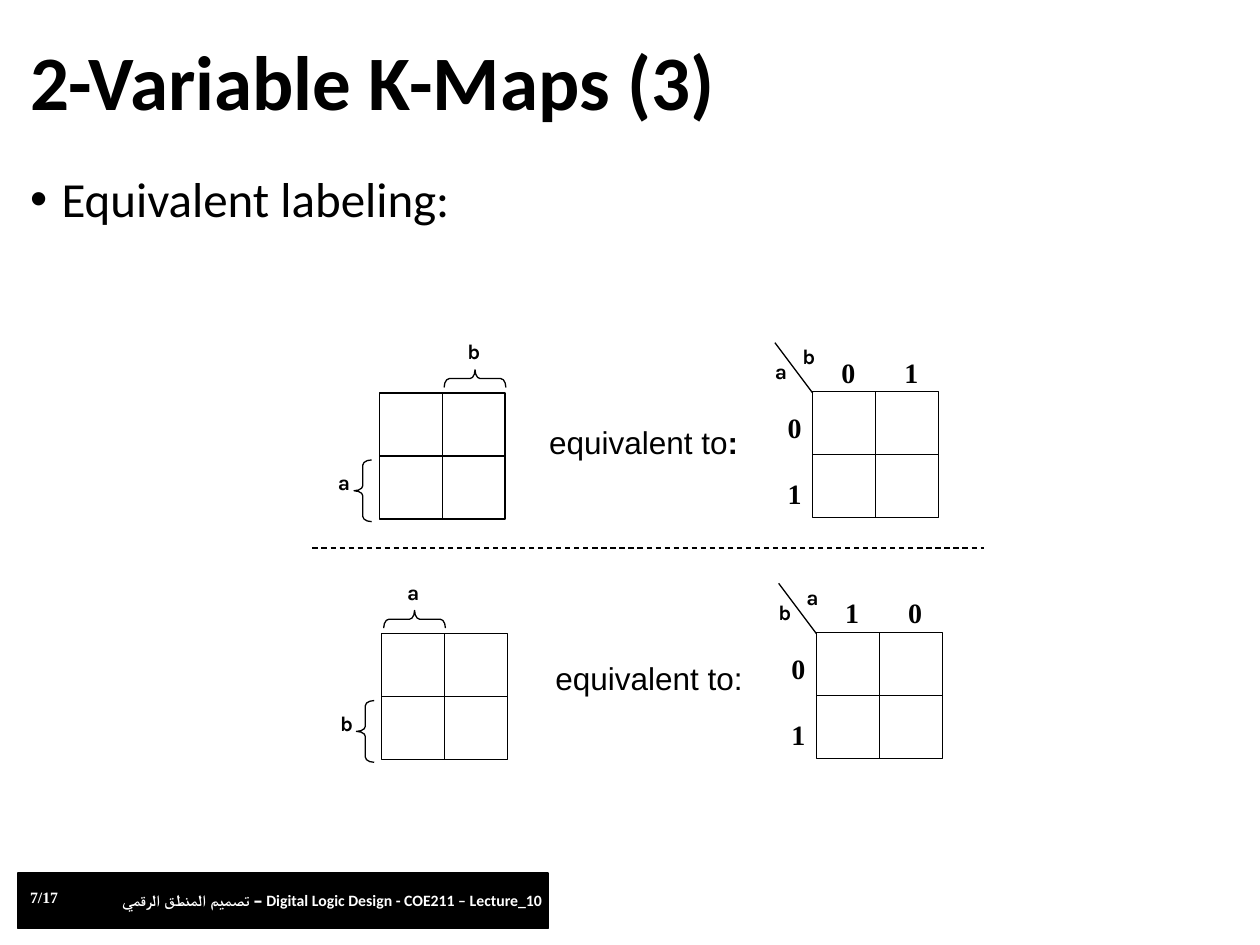
from lxml import etree
from pptx import Presentation
from pptx.dml.color import RGBColor
from pptx.enum.dml import MSO_LINE
from pptx.enum.shapes import MSO_CONNECTOR, MSO_SHAPE
from pptx.enum.text import MSO_ANCHOR, PP_ALIGN
from pptx.oxml.ns import qn
from pptx.util import Pt

PX = 9144  # EMU per px, 100 px to the inch
BLACK = RGBColor(0x00, 0x00, 0x00)
WHITE = RGBColor(0xFF, 0xFF, 0xFF)
RECTANGLE, BRACE = MSO_SHAPE.RECTANGLE, MSO_SHAPE.LEFT_BRACE
STRAIGHT, DASH = MSO_CONNECTOR.STRAIGHT, MSO_LINE.DASH
LEFT, CENTER, RIGHT = PP_ALIGN.LEFT, PP_ALIGN.CENTER, PP_ALIGN.RIGHT
TOP, MIDDLE = MSO_ANCHOR.TOP, MSO_ANCHOR.MIDDLE

TITLE = {"name": "Calibri", "size": Pt(44), "bold": True}
BODY = {"name": "Calibri", "size": Pt(28)}
VARIABLE = {"name": "Karla", "size": Pt(12), "bold": True}
DIGIT = {"name": "Times New Roman", "size": Pt(16), "bold": True}
PHRASE = {"name": "Arial", "size": Pt(18)}
FOOTER = {"name": "Calibri", "size": Pt(9), "bold": True}
PAGE = {"name": "Times New Roman", "size": Pt(9), "bold": True}

CELL = 50
GRID = 2 * CELL


def emu(*lengths):
    return [length * PX for length in lengths]


def add_run(paragraph, text, font_format, color=BLACK):
    run = paragraph.add_run()
    run.text = text
    for attribute, value in font_format.items():
        setattr(run.font, attribute, value)
    run.font.color.rgb = color


def add_text(slide, box, lines, font_format, color=BLACK, align=LEFT,
             anchor=TOP, wrap=True, **spacing):
    """Adds one paragraph per line and returns the paragraphs."""
    frame = slide.shapes.add_textbox(*emu(*box)).text_frame
    frame.word_wrap = wrap
    frame.vertical_anchor = anchor
    for index, line in enumerate(lines):
        paragraph = frame.add_paragraph() if index else frame.paragraphs[0]
        paragraph.alignment = align
        for attribute, value in spacing.items():
            setattr(paragraph, attribute, value)
        add_run(paragraph, line, font_format, color)
    return frame.paragraphs


def add_outline(slide, kind, box, width=0.75):
    shape = slide.shapes.add_shape(kind, *emu(*box))
    shape.shadow.inherit = False
    shape.fill.background()
    shape.line.color.rgb = BLACK
    shape.line.width = Pt(width)
    return shape


def add_line(slide, start, end):
    line = slide.shapes.add_connector(STRAIGHT, *emu(*start, *end))
    line.line.color.rgb = BLACK
    line.line.width = Pt(0.75)
    etree.SubElement(line._element.spPr, qn("a:effectLst"))
    return line


def add_brace(slide, left, top, rotation=0):
    brace = add_outline(slide, BRACE, (left, top, 14, 49))
    brace.adjustments[0] = 0.29
    brace.rotation = rotation


def add_grid(slide, left, top):
    add_outline(slide, RECTANGLE, (left, top, GRID, GRID))
    add_line(slide, (left, top + CELL), (left + GRID, top + CELL))
    add_line(slide, (left + CELL, top), (left + CELL, top + GRID))


def add_brace_map(slide, left, top, row, column, column_index):
    """K-map whose variables are marked with braces."""
    shift = column_index * CELL
    add_grid(slide, left + 50, top + 48)
    add_text(slide, (left, top + 104, 44, 40), [row], VARIABLE, align=CENTER)
    add_brace(slide, left + 30, top + 101)
    add_brace(slide, left + 69 + shift, top + 12, rotation=90)
    add_text(slide, (left + 53 + shift, top, 44, 32), [column], VARIABLE,
             align=CENTER)


def add_value_map(slide, left, top, row, column, column_values):
    """K-map whose rows and columns are headed by values."""
    add_grid(slide, left + 47, top + 43)
    add_text(slide, (left, top + 12, 44, 40), [row], VARIABLE, align=CENTER)
    add_text(slide, (left + 22, top, 44, 32), [column], VARIABLE, align=CENTER)
    add_line(slide, (left + 47, top + 44), (left + 17, top + 4))
    header, = add_text(slide, (left + 60, top + 9, 101, 39),
                       ["\t".join(column_values)], DIGIT)
    tabs = etree.SubElement(header._p.get_or_add_pPr(), qn("a:tabLst"))
    etree.SubElement(tabs, qn("a:tab"), pos=str(CELL * PX), algn="l")
    rows = add_text(slide, (left + 4, top + 53, 44, 85), ["0", "1"], DIGIT,
                    align=RIGHT)
    rows[1].space_before = Pt(18.4)


def add_heading(slide, left, top):
    add_text(slide, (left, top, 974, 85), ["2-Variable K-Maps (3)"], TITLE,
             anchor=MIDDLE, line_spacing=0.9)
    bullet, = add_text(slide, (left, top + 109, 974, 541),
                       ["Equivalent labeling:"], BODY,
                       line_spacing=0.9, space_before=Pt(10))
    properties = bullet._p.get_or_add_pPr()
    properties.set("marL", str(25 * PX))
    properties.set("indent", str(-25 * PX))
    etree.SubElement(properties, qn("a:buFont"), typeface="Arial")
    etree.SubElement(properties, qn("a:buChar"), char="•")


def add_footer(slide, left, top):
    bar = add_outline(slide, RECTANGLE, (left, top, 421, 44), 1)
    bar.fill.solid()
    bar.fill.fore_color.rgb = BLACK
    add_text(slide, (left, top + 7, 51, 25), ["7/17"], PAGE, WHITE, wrap=False)
    add_text(slide, (left + 73, top + 9, 372, 25),
             ["تصميم المنطق الرقمي – Digital Logic Design - COE211 – Lecture_10"],
             FOOTER, WHITE)


def add_phrase(slide, left, top, colon_bold):
    phrase, = add_text(slide, (left, top, 180, 40), ["equivalent to"], PHRASE)
    add_run(phrase, ":", {**PHRASE, "bold": colon_bold})


def main():
    presentation = Presentation()
    presentation.slide_width, presentation.slide_height = emu(1000, 750)
    slide = presentation.slides.add_slide(presentation.slide_layouts[6])

    add_footer(slide, 14, 693)
    add_heading(slide, 14, 25)

    # Upper pair: a on rows, b on columns
    add_brace_map(slide, 251, 264, "a", "b", 1)
    add_phrase(slide, 426, 331, True)
    add_value_map(slide, 598, 268, "a", "b", "01")

    # Divider
    add_line(slide, (248, 435), (781, 435)).line.dash_style = DASH

    # Lower pair: b on rows, a on columns
    add_brace_map(slide, 253, 455, "b", "a", 0)
    add_phrase(slide, 431, 518, False)
    add_value_map(slide, 601, 459, "b", "a", "10")

    presentation.save("out.pptx")


if __name__ == "__main__":
    main()
